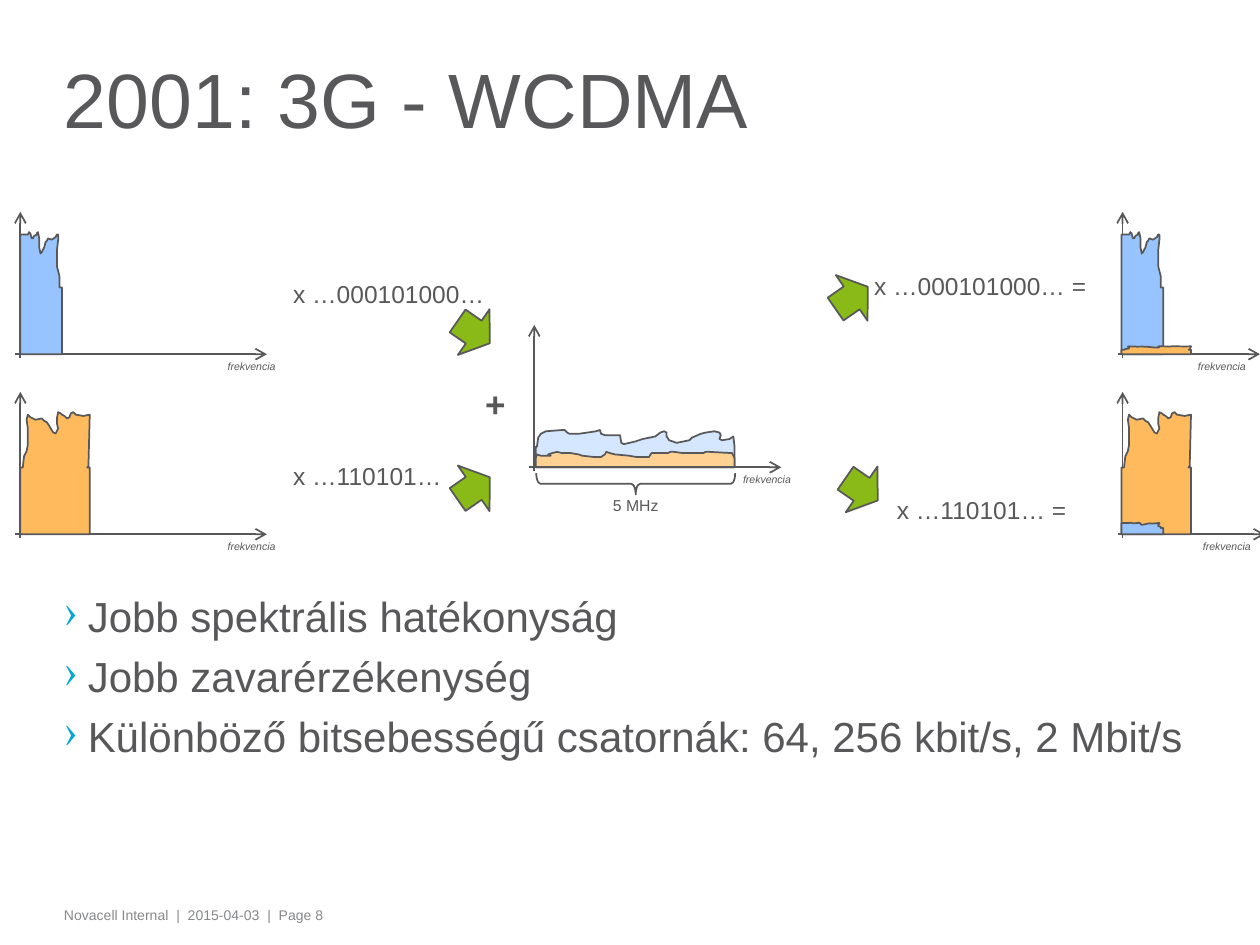
from dataclasses import dataclass

from lxml.etree import SubElement
from pptx import Presentation
from pptx.dml.color import RGBColor
from pptx.enum.shapes import MSO_CONNECTOR as Connector, MSO_SHAPE as Preset
from pptx.enum.text import MSO_ANCHOR as Anchor, PP_ALIGN as Align
from pptx.oxml.ns import qn
from pptx.util import Cm, Pt

GRAY, LIGHT_GRAY, WHITE = "58585A", "87888A", "FFFFFF"
BLUE, ORANGE, GREEN, CYAN = "97C3FF", "FFBA5D", "89BA17", "00A9D4"
PALE_BLUE, PALE_ORANGE = "D5E7FF", "FFD193"
Points = list[tuple[int, int]]

NARROW_BAND: Points = [
    (14, 0), (15, 5), (15, 12), (16, 17), (17, 16), (19, 12), (20, 8), (21, 7), (22, 5),
    (25, 6), (28, 4), (29, 2), (30, 2), (30, 6), (29, 15), (29, 27), (31, 35), (31, 44),
    (33, 44), (33, 97), (0, 97), (0, 44), (0, 2), (6, 2), (7, 0), (8, 1), (9, 5),
    (10, 5), (11, 3), (13, 2), (13, 1),
]
WIDE_BAND: Points = [
    (30, 0), (29, 5), (29, 9), (30, 13), (28, 17), (26, 16), (23, 11), (21, 8), (19, 7),
    (17, 5), (12, 6), (8, 4), (6, 2), (5, 6), (6, 13), (6, 26), (5, 31), (3, 35), (2, 44),
    (0, 44), (0, 97), (55, 97), (55, 44), (53, 44), (54, 43), (55, 2), (50, 3), (44, 2),
    (42, 0), (40, 1), (39, 4), (37, 5), (35, 3), (33, 2), (32, 1),
]
SPREAD_UPPER: Points = [
    (21, 0), (23, 0), (25, 2), (27, 3), (34, 3), (41, 2), (48, 1), (51, 0), (52, 3),
    (55, 4), (67, 4), (68, 10), (70, 11), (79, 9), (85, 7), (95, 5), (99, 2), (102, 1),
    (104, 2), (104, 5), (106, 8), (112, 10), (122, 8), (124, 6), (131, 3), (135, 2),
    (142, 1), (146, 2), (147, 4), (146, 7), (148, 8), (154, 7), (157, 5), (158, 13),
    (158, 29), (0, 29), (0, 13), (1, 13), (2, 6), (4, 3), (8, 1),
]
SPREAD_LOWER: Points = [
    (138, 0), (135, 0), (133, 1), (117, 1), (110, 0), (107, 0), (105, 1), (92, 1),
    (90, 4), (80, 4), (74, 3), (63, 2), (59, 1), (56, 0), (55, 2), (52, 4), (46, 4),
    (37, 3), (34, 2), (28, 1), (21, 1), (17, 0), (13, 1), (10, 2), (12, 3), (4, 3),
    (1, 2), (0, 5), (0, 12), (158, 12), (158, 5), (156, 1),
]


@dataclass
class Axes:
    x: float
    y: float
    end: float
    label_left: float


@dataclass
class Spectrum:
    outline: Points
    left: float
    baseline: float
    width: float
    height: float
    color: str


@dataclass
class Label:
    text: str
    left: float
    top: float
    width: float
    height: float
    size: float
    color: str = GRAY
    bold: bool = False
    italic: bool = False
    align: Align = Align.LEFT


@dataclass
class BlockArrow:
    left: float
    top: float
    rotation: float


TOP_ROW, BOTTOM_ROW, MIDDLE_ROW = 7.14, 10.77, 9.42
LEFT_BAND, RIGHT_BAND, MIDDLE_BAND = 0.41, 22.61, 10.8
NARROW, WIDE, SPREAD, TALL = 0.84, 1.4, 4.01, 2.46

OUTER_AXES = [
    Axes(0.41, TOP_ROW, 5.38, 4.34),
    Axes(0.41, BOTTOM_ROW, 5.38, 4.34),
    Axes(22.63, TOP_ROW, 25.4, 23.9),
    Axes(22.63, BOTTOM_ROW, 25.5, 24),
]
MIDDLE_AXES = Axes(10.77, MIDDLE_ROW, 15.75, 14.73)
SPECTRA = [
    Spectrum(NARROW_BAND, LEFT_BAND, TOP_ROW, NARROW, TALL, BLUE),
    Spectrum(WIDE_BAND, LEFT_BAND, BOTTOM_ROW, WIDE, TALL, ORANGE),
    Spectrum(NARROW_BAND, RIGHT_BAND, TOP_ROW, NARROW, TALL, BLUE),
    Spectrum(WIDE_BAND, RIGHT_BAND, BOTTOM_ROW, WIDE, TALL, ORANGE),
    Spectrum(SPREAD_UPPER, MIDDLE_BAND, MIDDLE_ROW, SPREAD, 0.75, PALE_BLUE),
    Spectrum(SPREAD_LOWER, MIDDLE_BAND, MIDDLE_ROW, SPREAD, 0.31, PALE_ORANGE),
    Spectrum(NARROW_BAND, RIGHT_BAND, BOTTOM_ROW, NARROW, 0.23, BLUE),
    Spectrum(WIDE_BAND, RIGHT_BAND, TOP_ROW, WIDE, 0.16, ORANGE),
]
LABELS = [
    Label("x …000101000…", 5.66, 5.51, 4.52, 0.86, 14),
    Label("x …110101…", 5.66, 9.17, 3.66, 0.86, 14),
    Label("x …110101… =", 17.83, 9.86, 3.94, 0.86, 14),
    Label("x …000101000… =", 17.37, 5.33, 4.8, 0.86, 14),
    Label("+", 9.53, 7.59, 0.91, 1.12, 20, bold=True),
    Label("5 MHz", 12.09, 9.86, 1.45, 0.64, 9, align=Align.CENTER),
]
ARROWS = [
    BlockArrow(8.99, 6.3, 304.7),
    BlockArrow(8.99, 9.45, 235.2),
    BlockArrow(16.81, 9.47, 304.7),
    BlockArrow(16.61, 5.61, 235.2),
]
BULLETS = [
    "Jobb spektrális hatékonyság",
    "Jobb zavarérzékenység",
    "Különböző bitsebességű csatornák: 64, 256 kbit/s, 2 Mbit/s",
]


def rgb(color: str) -> RGBColor:
    return RGBColor.from_string(color)


def paint(shape, color: str) -> None:
    shape.shadow.inherit = False
    shape.fill.solid()
    shape.fill.fore_color.rgb = rgb(color)
    shape.line.color.rgb = rgb(GRAY)
    shape.line.width = Pt(1)


def style_font(paragraph, size: float, color: str) -> None:
    font = paragraph.font
    font.name, font.size, font.color.rgb = "Arial", Pt(size), rgb(color)


def add_label(slide, label: Label):
    shape = slide.shapes.add_textbox(
        Cm(label.left), Cm(label.top), Cm(label.width), Cm(label.height))
    shape.text_frame.word_wrap = False
    paragraph = shape.text_frame.paragraphs[0]
    paragraph.text, paragraph.alignment = label.text, label.align
    style_font(paragraph, label.size, label.color)
    paragraph.font.bold, paragraph.font.italic = label.bold, label.italic
    return shape


def add_wide_text(slide, label: Label):
    frame = add_label(slide, label).text_frame
    frame.word_wrap = True
    frame.margin_left = frame.margin_right = Cm(0.2)
    frame.margin_top = frame.margin_bottom = 0
    return frame


def add_axis(slide, start: tuple[float, float], end: tuple[float, float]) -> None:
    axis = slide.shapes.add_connector(Connector.STRAIGHT, *map(Cm, start + end))
    axis.line.color.rgb = rgb(GRAY)
    axis.line.width = Pt(1)
    SubElement(axis.line._get_or_add_ln(), qn("a:tailEnd"), type="arrow")
    SubElement(axis._element.spPr, qn("a:effectLst"))


def add_axes(slide, axes: Axes) -> None:
    add_axis(slide, (axes.x, axes.y + 0.08), (axes.x, axes.y - 2.87))
    add_axis(slide, (axes.x - 0.1, axes.y), (axes.end, axes.y))
    add_label(slide, Label("frekvencia", axes.label_left, axes.y, 1.5, 0.51, 6, italic=True))


def add_spectrum(slide, spectrum: Spectrum) -> None:
    columns, rows = map(max, zip(*spectrum.outline))
    scale = (Cm(spectrum.width) / columns, Cm(spectrum.height) / rows)
    builder = slide.shapes.build_freeform(*spectrum.outline[0], scale=scale)
    builder.add_line_segments(spectrum.outline[1:], close=True)
    top = spectrum.baseline - spectrum.height
    paint(builder.convert_to_shape(Cm(spectrum.left), Cm(top)), spectrum.color)


def add_preset(slide, preset, left: float, top: float, width: float, height: float,
               rotation: float, color: str):
    shape = slide.shapes.add_shape(preset, Cm(left), Cm(top), Cm(width), Cm(height))
    shape.rotation = rotation
    paint(shape, color)
    return shape


def add_bullets(slide) -> None:
    frame = add_wide_text(slide, Label(BULLETS[0], 1.09, 11.91, 23.19, 5.99, 24))
    for text in BULLETS[1:]:
        paragraph = frame.add_paragraph()
        paragraph.text, paragraph.space_before = text, Pt(5.5)
    for paragraph in frame.paragraphs:
        properties = paragraph._p.get_or_add_pPr()
        properties.set("marL", str(Cm(0.48)))
        properties.set("indent", str(Cm(-0.48)))
        for default in properties.findall(qn("a:defRPr")):
            properties.remove(default)
        bullet_color = SubElement(properties, qn("a:buClr"))
        SubElement(bullet_color, qn("a:srgbClr"), val=CYAN)
        SubElement(properties, qn("a:buChar"), char="›")
        style_font(paragraph, 24, GRAY)


def main() -> None:
    presentation = Presentation()
    presentation.slide_width, presentation.slide_height = Cm(25.4), Cm(19.05)
    slide = presentation.slides.add_slide(presentation.slide_layouts[6])
    title = add_wide_text(slide, Label("2001: 3G - WCDMA", 1.09, 0.66, 20.83, 3.02, 44))
    title.vertical_anchor = Anchor.MIDDLE
    title.paragraphs[0].line_spacing = 0.75
    add_bullets(slide)
    footer = Label("Novacell Internal  |  2015-04-03  |  Page 8",
                   1.09, 18.14, 21.64, 0.61, 8, LIGHT_GRAY)
    add_wide_text(slide, footer).margin_top = Cm(0.13)
    for axes in OUTER_AXES:
        add_axes(slide, axes)
    brace = add_preset(slide, Preset.RIGHT_BRACE, 12.6, 7.75, 0.43, SPREAD, 90, WHITE)
    brace.adjustments[0] = 0.2
    for spectrum in SPECTRA:
        add_spectrum(slide, spectrum)
    add_axes(slide, MIDDLE_AXES)
    for arrow in ARROWS:
        add_preset(slide, Preset.DOWN_ARROW, arrow.left, arrow.top, 1.12, 0.79,
                   arrow.rotation, GREEN)
    for label in LABELS:
        add_label(slide, label)
    presentation.save("out.pptx")


if __name__ == "__main__":
    main()
